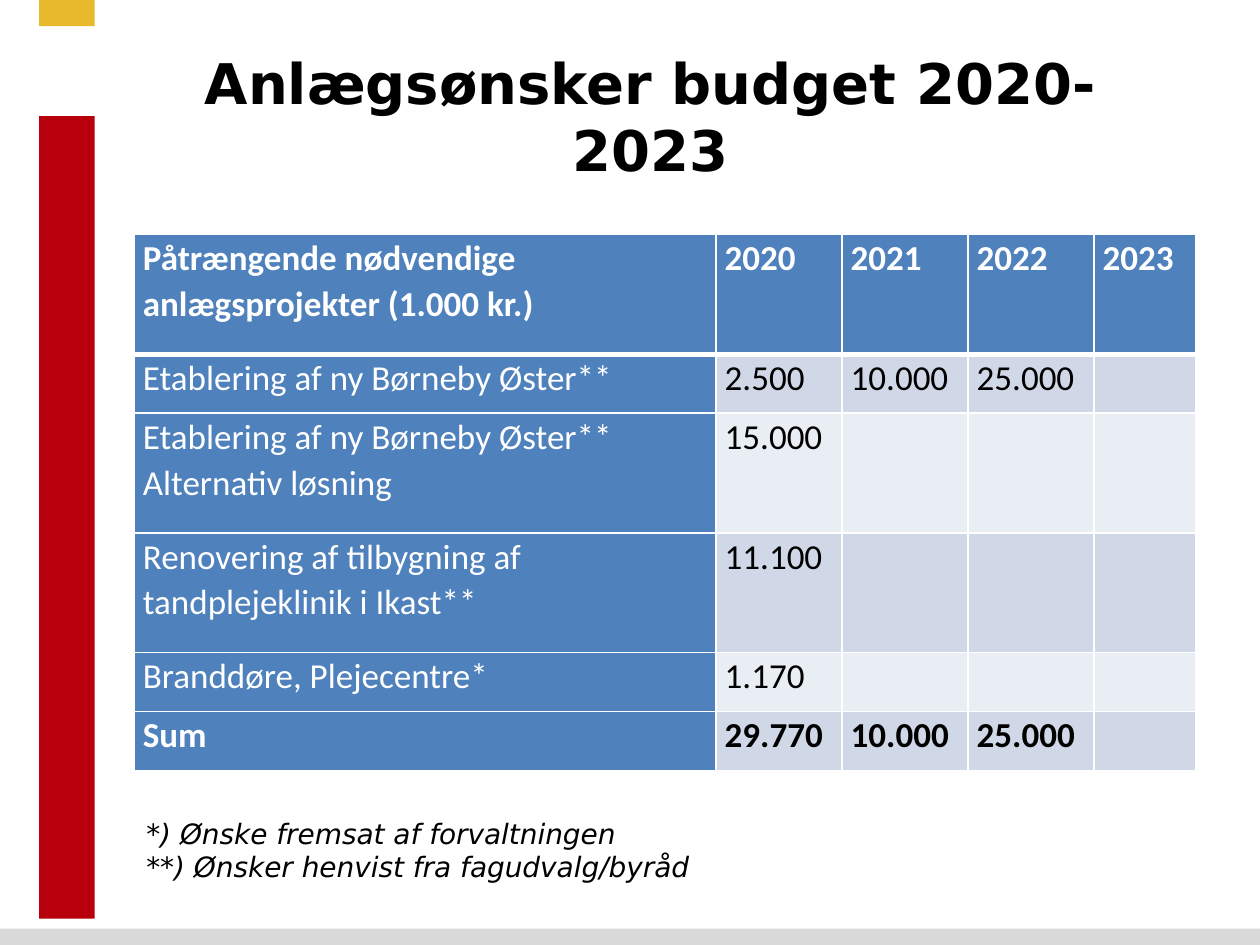
import pptx
import pptx.dml.color
import pptx.enum.shapes
import pptx.enum.text
import pptx.oxml.ns
import pptx.util
from lxml import etree

Cm, Pt = pptx.util.Cm, pptx.util.Pt
BLUE, WHITE, BLACK = "4F81BD", "FFFFFF", "000000"
BANDS = ("D0D8E8", "E9EDF4")
COLS = (11.73, 2.54, 2.54, 2.54, 2.06)
TALL, LOW = 2.41, 1.19
ROWS = (
    (TALL, "Påtrængende nødvendige anlægsprojekter (1.000 kr.)", "2020", "2021", "2022", "2023"),
    (LOW, "Etablering af ny Børneby Øster**", "2.500", "10.000", "25.000", ""),
    (TALL, "Etablering af ny Børneby Øster** Alternativ løsning", "15.000", "", "", ""),
    (TALL, "Renovering af tilbygning af tandplejeklinik i Ikast**", "11.100", "", "", ""),
    (LOW, "Branddøre, Plejecentre*", "1.170", "", "", ""),
    (LOW, "Sum", "29.770", "10.000", "25.000", ""),
)


def rgb(code):
    return pptx.dml.color.RGBColor.from_string(code)


def style(para, face, size, color, bold=False, slant=False):
    for run in para.runs:
        font = run.font
        font.name, font.size = face, Pt(size)
        font.bold, font.italic = bold, slant
        font.color.rgb = rgb(color)


def draw_bar(slide, box, color):
    kind = pptx.enum.shapes.MSO_SHAPE.RECTANGLE
    bar = slide.shapes.add_shape(kind, *map(Cm, box))
    bar.shadow.inherit = False
    bar.fill.solid()
    bar.fill.fore_color.rgb = rgb(color)
    bar.line.fill.background()


def draw_frame(slide, width, height):
    """Place the red and yellow side bars and the grey foot strip."""
    left, wide, foot = 0.79, 1.12, 0.33
    draw_bar(slide, (left, 2.34, wide, 16.18), "B8000C")
    draw_bar(slide, (0, height - foot, width, foot), "D9D9D9")
    draw_bar(slide, (left, 0, wide, 0.53), "E9B92D")


def draw_text(slide, box, text):
    frame = slide.shapes.add_textbox(*map(Cm, box)).text_frame
    frame.word_wrap = True
    frame.text = text
    return frame


def draw_title(slide, box):
    frame = draw_text(slide, box, "Anlægsønsker budget 2020-2023")
    frame.vertical_anchor = pptx.enum.text.MSO_ANCHOR.MIDDLE
    para = frame.paragraphs[0]
    para.alignment = pptx.enum.text.PP_ALIGN.CENTER
    style(para, "DejaVu Sans", 32, BLACK, bold=True)


def draw_notes(slide, box):
    text = "*) Ønske fremsat af forvaltningen\n**) Ønsker henvist fra fagudvalg/byråd"
    for para in draw_text(slide, box, text).paragraphs:
        style(para, "DejaVu Sans", 16, BLACK, slant=True)


def set_edges(cell, top, base):
    """Give a cell white borders; top and base are line widths in points."""
    props = cell._tc.get_or_add_tcPr()
    qn = pptx.oxml.ns.qn
    for side, width in (("L", 1), ("R", 1), ("T", top), ("B", base)):
        line = etree.SubElement(props, qn("a:ln" + side), w=str(Pt(width)))
        fill = etree.SubElement(line, qn("a:solidFill"))
        etree.SubElement(fill, qn("a:srgbClr"), val=WHITE)


def fill_cell(cell, text, row, col):
    head = row == 0
    set_edges(cell, 3 if row == 1 else 1, 3 if head else 1)
    dark = head or col == 0
    cell.fill.solid()
    cell.fill.fore_color.rgb = rgb(BLUE if dark else BANDS[(row - 1) % 2])
    cell.margin_left = cell.margin_right = Cm(0.18)
    cell.margin_top = cell.margin_bottom = 0
    if text:
        cell.text_frame.text = text
        para = cell.text_frame.paragraphs[0]
        para.line_spacing = 1.07
        bold = head or row == len(ROWS) - 1
        style(para, "Calibri", 20, WHITE if dark else BLACK, bold)


def draw_table(slide, left, top):
    high = sum(row[0] for row in ROWS)
    box = (left, top, sum(COLS), high)
    shape = slide.shapes.add_table(len(ROWS), len(COLS), *map(Cm, box))
    table = shape.table
    for col, width in zip(table.columns, COLS):
        col.width = Cm(width)
    for r, (height, *texts) in enumerate(ROWS):
        table.rows[r].height = Cm(height)
        for c, text in enumerate(texts):
            fill_cell(table.cell(r, c), text, r, c)


def main():
    deck = pptx.Presentation()
    width, height = 25.4, 19.05
    deck.slide_width, deck.slide_height = Cm(width), Cm(height)
    slide = deck.slides.add_slide(deck.slide_layouts[6])
    draw_frame(slide, width, height)
    draw_table(slide, 2.7, 4.73)
    draw_title(slide, (3.5, 0.74, 19.23, 3.18))
    draw_notes(slide, (2.7, 16.33, 11.81, 1.63))
    deck.save("out.pptx")


if __name__ == "__main__":
    main()
